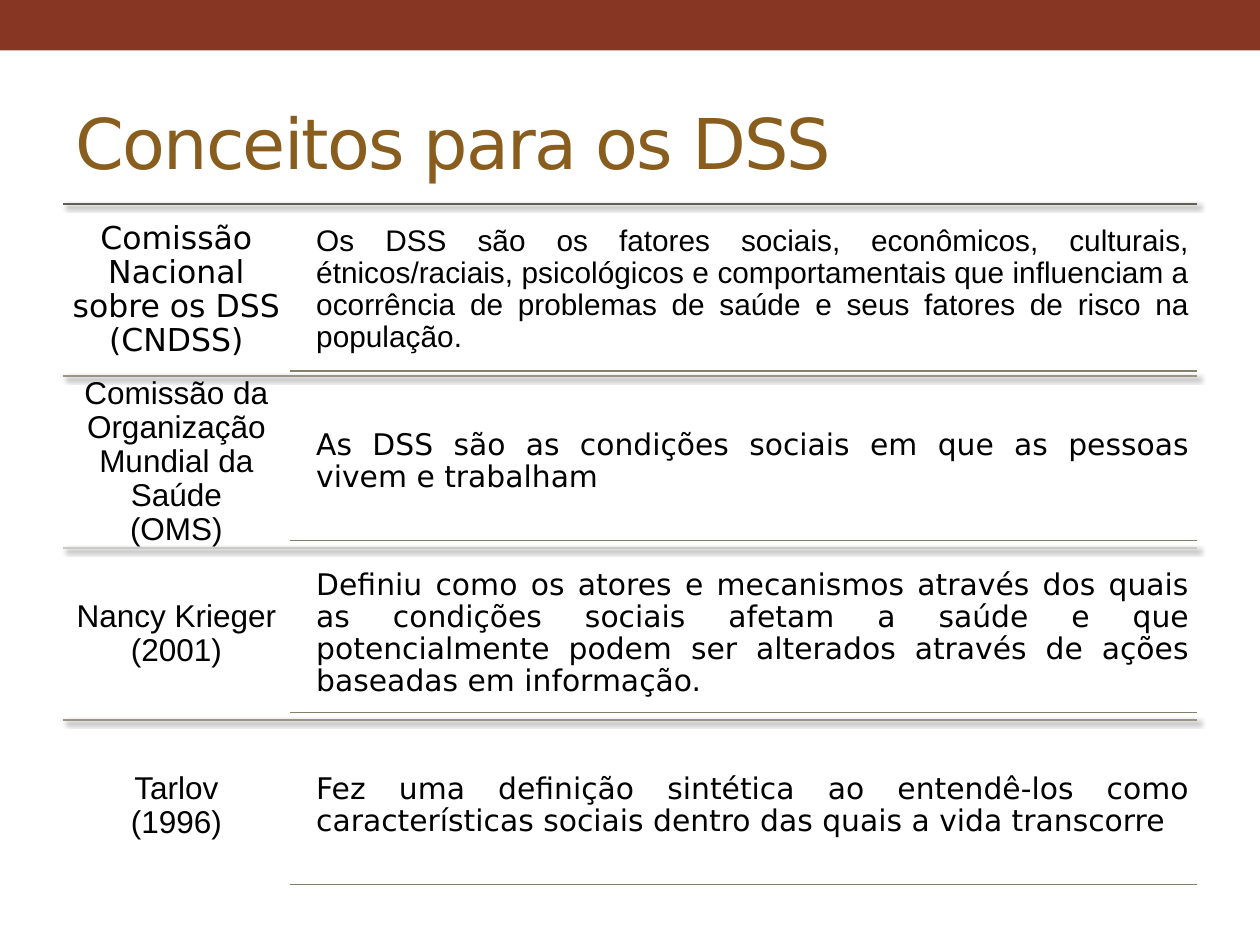
from dataclasses import dataclass

from lxml import etree
from pptx import Presentation
from pptx.dml.color import RGBColor
from pptx.enum.shapes import MSO_CONNECTOR, MSO_SHAPE
from pptx.enum.text import MSO_ANCHOR, PP_ALIGN
from pptx.oxml.ns import qn
from pptx.util import Inches, Pt

STRAIGHT = MSO_CONNECTOR.STRAIGHT
RECTANGLE = MSO_SHAPE.RECTANGLE
MIDDLE = MSO_ANCHOR.MIDDLE
LEFT, CENTER, JUSTIFY = PP_ALIGN.LEFT, PP_ALIGN.CENTER, PP_ALIGN.JUSTIFY

BLACK = RGBColor(0x00, 0x00, 0x00)
BRICK = RGBColor(0x87, 0x36, 0x24)
OCHRE = RGBColor(0x89, 0x5D, 0x1D)
DARK_RULE = RGBColor(0x64, 0x5E, 0x50)
MID_RULE = RGBColor(0x9A, 0x94, 0x87)
PALE_RULE = RGBColor(0xCB, 0xC9, 0xC4)
DETAIL_RULE = RGBColor(0x87, 0x7F, 0x6C)

SANS, ARIAL = "DejaVu Sans", "Arial"

# Row grid, in inches
ROWS_TOP, ROWS_BOTTOM = 1.62, 7.08
ROW_LEFT, ROW_RIGHT = 0.5, 9.5
SOURCE_WIDTH = 1.8
DETAIL_LEFT, DETAIL_WIDTH = 2.44, 7.07
INSET = 0.07


@dataclass
class Concept:
    source: str
    source_font: str
    definition: str
    definition_font: str
    rule_color: RGBColor
    gap: float = 0.06


CONCEPTS = [
    Concept("Comissão Nacional sobre os DSS (CNDSS)", SANS,
            "Os DSS são os fatores sociais, econômicos, culturais, "
            "étnicos/raciais, psicológicos e comportamentais que influenciam "
            "a ocorrência de problemas de saúde e seus fatores de risco na "
            "população.", ARIAL, DARK_RULE, 0.04),
    Concept("Comissão da Organização Mundial da Saúde\v(OMS)", ARIAL,
            "As DSS são as condições sociais em que as pessoas vivem e "
            "trabalham", SANS, MID_RULE),
    Concept("Nancy Krieger (2001)", ARIAL,
            "Definiu como os atores e mecanismos através dos quais as "
            "condições sociais afetam a saúde e que potencialmente podem ser "
            "alterados através de ações baseadas em informação.",
            SANS, PALE_RULE),
    Concept("Tarlov\v(1996)", ARIAL,
            "Fez uma definição sintética ao entendê-los como características "
            "sociais dentro das quais a vida transcorre", SANS, MID_RULE),
]


def add_text(page, left: float, top: float, width: float, height: float,
             text: str, font: dict, align, inset: float = INSET,
             line_spacing: float = 0.9):
    box = page.shapes.add_textbox(
        Inches(left), Inches(top), Inches(width), Inches(height))
    frame = box.text_frame
    frame.word_wrap = True
    frame.vertical_anchor = MIDDLE
    for side in ("left", "right", "top", "bottom"):
        setattr(frame, f"margin_{side}", Inches(inset))
    para = frame.paragraphs[0]
    para.text = text
    para.alignment = align
    para.line_spacing = line_spacing
    for span in para.runs:
        for name, value in font.items():
            setattr(span.font, name, value)
        span.font.color.rgb = BLACK
    return box


def add_rule(page, left: float, y: float, color: RGBColor,
             shadow: bool = False) -> None:
    rule = page.shapes.add_connector(
        STRAIGHT, Inches(left), Inches(y), Inches(ROW_RIGHT), Inches(y))
    rule.line.color.rgb = color
    rule.line.width = Pt(0.75)
    effects = etree.SubElement(rule._element.spPr, qn("a:effectLst"))
    if shadow:
        outer = etree.SubElement(
            effects, qn("a:outerShdw"), blurRad=str(Pt(3)), dist=str(Pt(2)),
            dir=str(45 * 60000), rotWithShape="0")
        black = etree.SubElement(outer, qn("a:srgbClr"), val=str(BLACK))
        etree.SubElement(black, qn("a:alpha"), val="60000")


def add_concept(page, concept: Concept, top: float, height: float) -> None:
    add_rule(page, ROW_LEFT, top, concept.rule_color, shadow=True)
    add_text(page, ROW_LEFT, top, SOURCE_WIDTH, height, concept.source,
             {"name": concept.source_font, "size": Pt(18)}, CENTER)
    add_text(page, DETAIL_LEFT, top + concept.gap, DETAIL_WIDTH,
             height - 2 * concept.gap, concept.definition,
             {"name": concept.definition_font, "size": Pt(17)}, JUSTIFY)
    add_rule(page, ROW_LEFT + SOURCE_WIDTH, top + height - concept.gap,
             DETAIL_RULE)


def main() -> None:
    deck = Presentation()
    deck.slide_width, deck.slide_height = Inches(10), Inches(7.5)
    page = deck.slides.add_slide(deck.slide_layouts[6])

    # Top band
    band = page.shapes.add_shape(
        RECTANGLE, Inches(0), Inches(0), deck.slide_width, Inches(0.4))
    band.shadow.inherit = False
    band.fill.solid()
    band.fill.fore_color.rgb = BRICK
    band.line.fill.background()

    # Title, slightly tightened
    title = add_text(page, 0.5, 0.58, 9, 1.08, "Conceitos para os DSS",
                     {"name": SANS, "size": Pt(40)}, LEFT, 0.1, 1.0)
    span = title.text_frame.paragraphs[0].runs[0]
    span.font.color.rgb = OCHRE
    span._r.get_or_add_rPr().set("spc", "-100")

    # Concept rows
    height = (ROWS_BOTTOM - ROWS_TOP) / len(CONCEPTS)
    for index, concept in enumerate(CONCEPTS):
        add_concept(page, concept, ROWS_TOP + index * height, height)

    deck.save("out.pptx")


if __name__ == "__main__":
    main()
